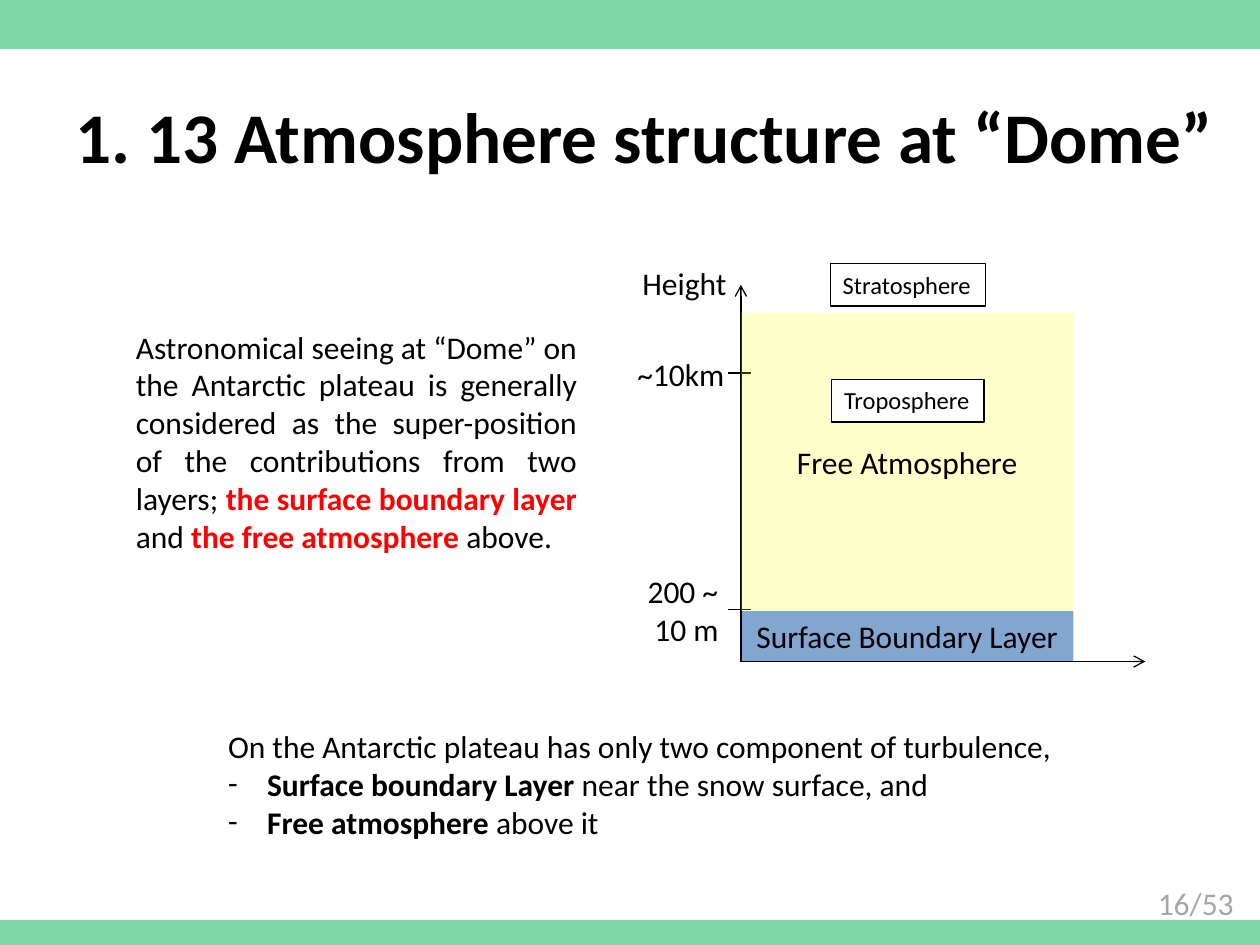
import dataclasses

import pptx
import pptx.dml.color
import pptx.enum.shapes
import pptx.enum.text
import pptx.oxml
import pptx.oxml.ns
import pptx.util

ALIGN = pptx.enum.text.PP_ALIGN
ANCHOR = pptx.enum.text.MSO_ANCHOR
UNIT = pptx.util.Inches(0.1)  # one column or row; the slide is 100 by 75


@dataclasses.dataclass(frozen=True)
class Theme:
    font: str = "Calibri"
    ink: str = "000000"
    accent: str = "FF0000"
    muted: str = "A6A6A6"
    paper: str = "FFFFFF"
    band: str = "00B050"
    surface: str = "4F81BD"
    free_air: str = "FFFF00"
    title: float = 40.7
    text: float = 18
    tag: float = 14
    line: float = 0.75


THEME = Theme()


@dataclasses.dataclass(frozen=True)
class Box:
    left: float
    top: float
    width: float
    height: float

    def inner(self, left, top, width, height):
        return Box(self.left + left, self.top + top, width, height)

    def lengths(self):
        return [round(n * UNIT) for n in (self.left, self.top, self.width, self.height)]


def rgb(color):
    return pptx.dml.color.RGBColor.from_string(color)


def add_xml(parent, tag, **attributes):
    element = pptx.oxml.ns.qn(tag)
    child = parent.makeelement(element, attributes)
    parent.append(child)
    return child


def write(shape, paragraphs, size=THEME.text, color=THEME.ink, align=ALIGN.LEFT,
          anchor=ANCHOR.TOP, wrap=False, bold=None, bullets=None):
    """Each paragraph is a list of (text, bold, color) spans."""
    frame = shape.text_frame
    frame.word_wrap = wrap
    frame.auto_size = pptx.enum.text.MSO_AUTO_SIZE.NONE
    frame.vertical_anchor = anchor
    for index, spans in enumerate(paragraphs):
        para = frame.paragraphs[0] if index == 0 else frame.add_paragraph()
        para.alignment = align
        if bullets:
            para.space_before = pptx.util.Pt(0)
            set_bullet(para, bullets[index])
        para.font.name = THEME.font
        para.font.size = pptx.util.Pt(size)
        para.font.color.rgb = rgb(color)
        para.font.bold = bold
        for text, strong, tint in spans:
            span = para.add_run()
            span.text = text
            if strong:
                span.font.bold = True
            if tint:
                span.font.color.rgb = rgb(tint)


def set_bullet(para, mark):
    properties = para._p.get_or_add_pPr()
    indent = pptx.util.Inches(0.31) if mark else 0
    properties.set("marL", str(indent))
    properties.set("indent", str(-indent))
    if mark:
        add_xml(properties, "a:buFont", typeface=THEME.font)
        add_xml(properties, "a:buChar", char=mark)
    else:
        add_xml(properties, "a:buNone")


def plain(text):
    return [(text, False, None)]


def add_label(page, box, *lines, **style):
    label = page.shapes.add_textbox(*box.lengths())
    write(label, [plain(line) for line in lines], **style)


def add_block(page, box, fill=None, opacity=100, outlined=False):
    block = page.shapes.add_shape(
        pptx.enum.shapes.MSO_SHAPE.RECTANGLE, *box.lengths())
    block.shadow.inherit = False
    if fill:
        block.fill.solid()
        block.fill.fore_color.rgb = rgb(fill)
        if opacity < 100:
            color = block.fill._xPr.find(".//" + pptx.oxml.ns.qn("a:srgbClr"))
            add_xml(color, "a:alpha", val=str(opacity * 1000))
    else:
        block.fill.background()
    if outlined:
        block.line.color.rgb = rgb(THEME.ink)
        block.line.width = pptx.util.Pt(THEME.line)
    else:
        block.line.fill.background()
    return block


def add_line(page, box, arrow=False):
    left, top, width, height = box.lengths()
    line = page.shapes.add_connector(
        pptx.enum.shapes.MSO_CONNECTOR.STRAIGHT, left, top, left + width, top + height)
    line.line.color.rgb = rgb(THEME.ink)
    line.line.width = pptx.util.Pt(THEME.line)
    if arrow:
        add_xml(line.line._get_or_add_ln(), "a:tailEnd", type="arrow")
    add_xml(line._element.spPr, "a:effectLst")


def place(shape, box):
    shape.left, shape.top, shape.width, shape.height = box.lengths()


def fill_title(page, box):
    place(page.shapes.title, box)
    write(page.shapes.title, [plain("1. 13 Atmosphere structure at “Dome”")],
          size=THEME.title, anchor=ANCHOR.MIDDLE, wrap=True, bold=True)


def fill_summary(page, box):
    body = page.placeholders[1]
    place(body, box)
    write(body, [
        plain("On the Antarctic plateau has only two component of turbulence,"),
        [("Surface boundary Layer ", True, None),
         ("near the snow surface, and", False, None)],
        [("Free atmosphere ", True, None), ("above it", False, None)],
    ], bullets=[None, "-", "-"])


def add_explanation(page, box):
    text = page.shapes.add_textbox(*box.lengths())
    write(text, [[
        ("Astronomical seeing at “Dome” on the Antarctic plateau is generally "
         "considered as the super-position of the contributions from two layers; ",
         False, None),
        ("the surface boundary layer ", True, THEME.accent),
        ("and ", False, None),
        ("the free atmosphere", True, THEME.accent),
        (" above.", False, None),
    ]], align=ALIGN.JUSTIFY, wrap=True)


def add_diagram(page, box):
    axis, layer_width = 9.2, 26.4
    base, boundary, sky = box.height, 28, 4.3

    def add_layer(name, top, bottom, fill, opacity):
        area = box.inner(axis, top, layer_width, bottom - top)
        layer = add_block(page, area, fill, opacity)
        write(layer, [plain(name)], align=ALIGN.CENTER, anchor=ANCHOR.MIDDLE, wrap=True)

    # Lower layer, axes and height marks
    add_layer("Surface Boundary Layer", boundary, base, THEME.surface, 70)
    add_line(page, box.inner(axis, base, 0, 2.1 - base), arrow=True)
    add_line(page, box.inner(axis, base, box.width - axis, 0), arrow=True)
    for height in (9.1, boundary - 0.1):
        add_line(page, box.inner(axis - 1, height, 1.8, 0))
    add_label(page, box.inner(0.4, 0, 8.8, 4), "Height")
    add_label(page, box.inner(0, 7.2, 9, 4), "~10km")
    add_label(page, box.inner(0.7, 24.4, 7.8, 7.1), "200 ~", " 10 m", align=ALIGN.CENTER)

    # Upper layer and region tags
    add_layer("Free Atmosphere", sky, boundary, THEME.free_air, 20)
    for name, left, top, width, fill in (("Stratosphere", 16.3, 0.4, 12.3, None),
                                         ("Troposphere", 16.4, 9.6, 12.1, THEME.paper)):
        tag = add_block(page, box.inner(left, top, width, 3.4), fill, outlined=True)
        write(tag, [plain(name)], size=THEME.tag)


def add_frame(page, box):
    for top, height in ((0, 3.9), (box.height - 2, 2)):
        add_block(page, box.inner(0, top, box.width, height), THEME.band, 50)
    add_label(page, box.inner(90.9, 69.7, 8.5, 4), "16/53", color=THEME.muted)


def main():
    deck = pptx.Presentation()
    deck.slide_width, deck.slide_height = 100 * UNIT, 75 * UNIT
    page = deck.slides.add_slide(deck.slide_layouts[1])
    add_frame(page, Box(0, 0, 100, 75))
    fill_title(page, Box(5, 4.5, 95, 12.5))
    add_explanation(page, Box(9.8, 25.5, 37, 22.2))
    add_diagram(page, Box(49.6, 20.5, 41.3, 32))
    fill_summary(page, Box(17.1, 57.2, 68.1, 10.1))
    deck.save("out.pptx")


if __name__ == "__main__":
    main()
